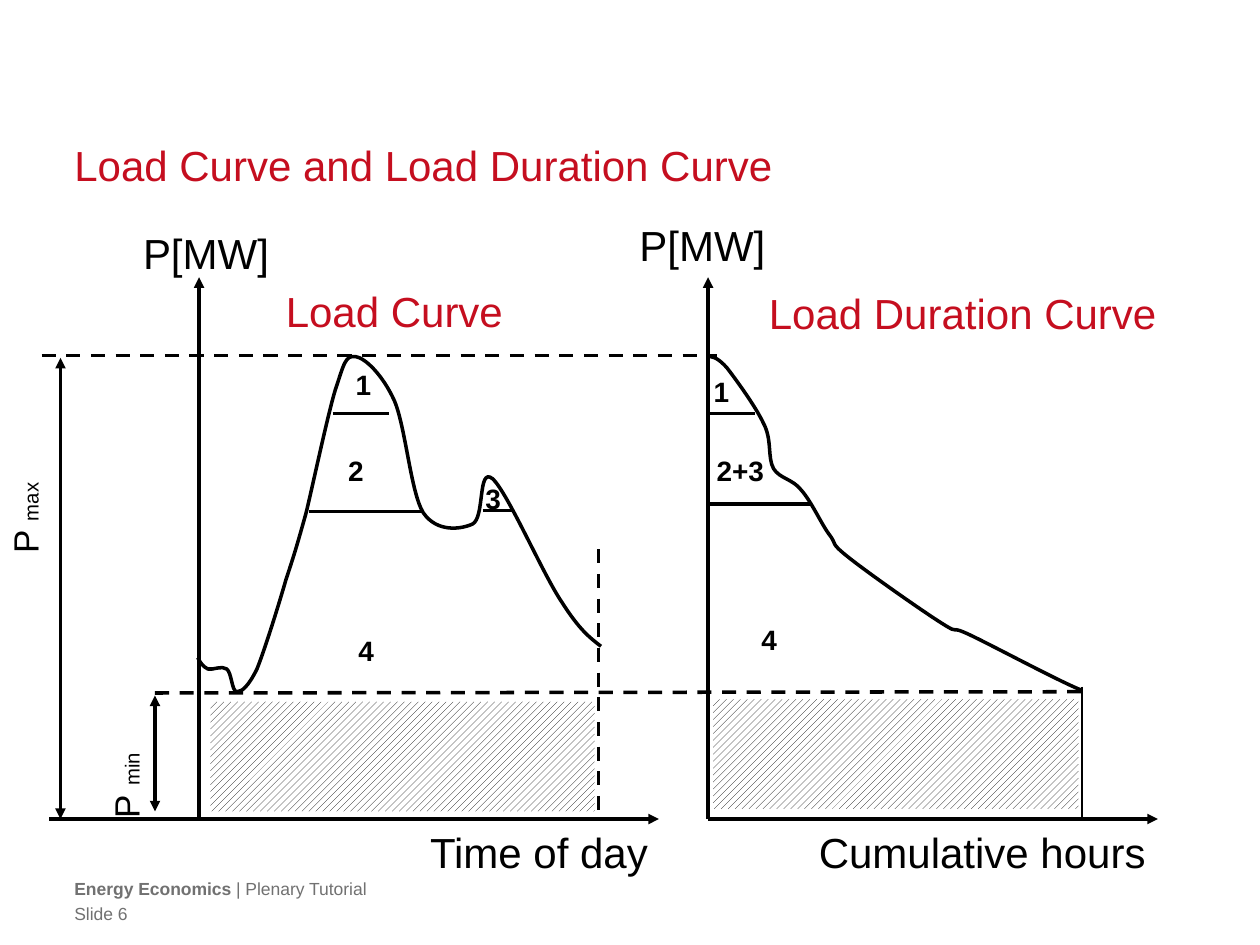
from lxml.etree import SubElement
from pptx import Presentation
from pptx.dml.color import RGBColor
from pptx.enum.dml import MSO_LINE, MSO_PATTERN
from pptx.enum.shapes import MSO_CONNECTOR, MSO_SHAPE
from pptx.enum.text import MSO_ANCHOR, PP_ALIGN
from pptx.oxml.ns import qn
from pptx.util import Inches, Pt

BLACK, WHITE, RED, GREY = "000000", "FFFFFF", "C50E1F", "717171"
FONT = "Arial"
TITLE = "Load Curve and Load Duration Curve"

BASE, AXIS_TOP = 6.5, 2.2
LOAD_AXIS, DURATION_AXIS = 1.58, 5.62
PEAK, MINIMUM = 2.82, 5.5

# x1, y1, x2, y2
AXES = [
    (0.39, BASE, 5.23, BASE),
    (LOAD_AXIS, BASE, LOAD_AXIS, AXIS_TOP),
    (DURATION_AXIS, BASE, 9.19, BASE),
    (DURATION_AXIS, BASE, DURATION_AXIS, AXIS_TOP),
]
DIMENSIONS = [(0.48, 2.84, 0.48, BASE), (1.23, 5.52, 1.23, 6.44)]
GUIDES = [
    (4.75, 4.36, 4.75, BASE),
    (1.23, MINIMUM, 8.59, 5.49),
    (0.33, PEAK, 5.69, PEAK),
]
BAND_LIMITS = [
    (2.45, 4.06, 3.35, 4.06),
    (2.64, 3.28, 3.09, 3.28),
    (3.83, 4.05, 4.06, 4.05),
    (DURATION_AXIS, 3.28, 5.99, 3.28),
    (DURATION_AXIS, 4, 6.44, 4),
]
DURATION_END = (8.59, 5.45, 8.59, 6.52)

# Start point, then three Bezier points for each segment
LOAD_CURVE = [
    (1.57, 5.22),
    (1.59, 5.26), (1.61, 5.29), (1.65, 5.31),
    (1.69, 5.32), (1.76, 5.28), (1.80, 5.31),
    (1.84, 5.34), (1.84, 5.49), (1.88, 5.49),
    (1.92, 5.49), (1.97, 5.45), (2.04, 5.31),
    (2.10, 5.16), (2.21, 4.81), (2.27, 4.60),
    (2.34, 4.39), (2.36, 4.32), (2.43, 4.07),
    (2.49, 3.82), (2.60, 3.30), (2.66, 3.10),
    (2.73, 2.89), (2.74, 2.82), (2.82, 2.83),
    (2.90, 2.84), (3.04, 2.98), (3.13, 3.18),
    (3.22, 3.39), (3.26, 3.91), (3.36, 4.07),
    (3.47, 4.23), (3.66, 4.20), (3.75, 4.16),
    (3.85, 4.11), (3.79, 3.70), (3.91, 3.80),
    (4.03, 3.91), (4.31, 4.56), (4.46, 4.78),
    (4.60, 5.00), (4.68, 5.06), (4.77, 5.13),
]
DURATION_CURVE = [
    (5.62, 2.83),
    (5.65, 2.83), (5.69, 2.83), (5.77, 2.92),
    (5.84, 3.01), (6.00, 3.23), (6.06, 3.36),
    (6.13, 3.49), (6.09, 3.63), (6.14, 3.72),
    (6.19, 3.80), (6.29, 3.80), (6.36, 3.89),
    (6.44, 3.98), (6.52, 4.16), (6.58, 4.24),
    (6.65, 4.33), (6.58, 4.30), (6.73, 4.42),
    (6.88, 4.54), (7.32, 4.85), (7.48, 4.95),
    (7.64, 5.05), (7.51, 4.95), (7.70, 5.04),
    (7.89, 5.13), (8.43, 5.42), (8.59, 5.48),
]

BASE_LOADS = [(1.67, 5.57, 3.05, 0.87), (5.66, 5.55, 2.9, 0.87)]
BAND_LABELS = [
    ("1", 2.55, 2.87), ("2", 2.49, 3.55), ("4", 2.57, 4.98), ("3", 3.58, 3.77),
    ("4", 5.77, 4.89), ("1", 5.39, 2.92), ("2+3", 5.54, 3.55),
]
# Text, box, colour, alignment
CAPTIONS = [
    ("P[MW]", (0.93, 1.76, 1.41, 0.5), BLACK, PP_ALIGN.CENTER),
    ("P[MW]", (4.87, 1.69, 1.41, 0.5), BLACK, PP_ALIGN.CENTER),
    ("Time of day", (2.79, 6.51, 2.45, 0.5), BLACK, PP_ALIGN.RIGHT),
    ("Cumulative hours", (6.21, 6.51, 2.98, 0.5), BLACK, PP_ALIGN.RIGHT),
    ("Load Curve", (2.11, 2.22, 2.04, 0.5), RED, PP_ALIGN.CENTER),
    ("Load Duration Curve", (5.94, 2.23, 3.4, 0.5), RED, PP_ALIGN.CENTER),
]
POWER_LABELS = [("max", (-0.02, 3.56, 0.54, 0.93)), ("min", (0.78, 5.43, 0.54, 1.16))]
FOOTER = [
    ("Energy Economics ", "| Plenary Tutorial", 6.97),
    ("", "Slide 6", 7.17),
]


def color(value):
    return RGBColor.from_string(value)


def inches(values):
    return [Inches(value) for value in values]


def format_font(font, size, value, bold=False):
    font.name, font.size, font.bold = FONT, Pt(size), bold
    font.color.rgb = color(value)


def clear_margins(frame):
    frame.margin_left = frame.margin_top = frame.margin_right = frame.margin_bottom = 0


def add_text(slide, text, box, size, value=BLACK, align=PP_ALIGN.CENTER, bold=False):
    shape = slide.shapes.add_textbox(*inches(box))
    shape.text_frame.word_wrap = True
    paragraph = shape.text_frame.paragraphs[0]
    paragraph.alignment = align
    format_font(paragraph.font, size, value, bold)
    if text:
        paragraph.add_run().text = text
    return shape


def add_line(slide, points, width=2, dashed=False, arrows=()):
    """Draw a line; arrows names the ends that carry a triangle."""
    connector = slide.shapes.add_connector(MSO_CONNECTOR.STRAIGHT, *inches(points))
    connector.line.color.rgb = color(BLACK)
    connector.line.width = Pt(width)
    if dashed:
        connector.line.dash_style = MSO_LINE.DASH
    properties = connector.element.spPr
    for end in arrows:
        SubElement(properties.find(qn("a:ln")), qn(f"a:{end}"), type="triangle")
    SubElement(properties, qn("a:effectLst"))


def add_curve(slide, points):
    """Build an outline through all points, then join each three as one Bezier segment."""
    start, *rest = [inches(point) for point in points]
    builder = slide.shapes.build_freeform(*start)
    builder.add_line_segments(rest, close=False)
    shape = builder.convert_to_shape()
    shape.shadow.inherit = False
    shape.fill.background()
    shape.line.color.rgb = color(BLACK)
    shape.line.width = Pt(2)
    path = next(shape.element.iter(qn("a:path")))
    segments = path.findall(qn("a:lnTo"))
    for first in range(0, len(segments), 3):
        bezier = SubElement(path, qn("a:cubicBezTo"))
        for segment in segments[first:first + 3]:
            bezier.append(segment[0])
            path.remove(segment)


def add_power_label(slide, subscript, box):
    """Write P with a subscript, reading upwards."""
    shape = add_text(slide, "P", box, 20)
    shape.rotation = 180
    shape.text_frame._txBody.bodyPr.set("vert", "eaVert")
    run = shape.text_frame.paragraphs[0].add_run()
    run.text = subscript
    run.font._element.set("baseline", "-25000")


def main():
    presentation = Presentation()
    presentation.slide_width, presentation.slide_height = Inches(10), Inches(7.5)
    slide = presentation.slides.add_slide(presentation.slide_layouts[5])

    title = slide.shapes.title
    title.left, title.top, title.width, title.height = inches((0.59, 1.09, 8.82, 0.81))
    title.text_frame.text = TITLE
    title.text_frame.vertical_anchor = MSO_ANCHOR.TOP
    clear_margins(title.text_frame)
    paragraph = title.text_frame.paragraphs[0]
    paragraph.alignment, paragraph.line_spacing = PP_ALIGN.LEFT, Pt(30)
    format_font(paragraph.font, 24, RED)

    for strong, plain, top in FOOTER:
        shape = add_text(slide, strong, (0.59, top, 8.82, 0.17), 10, GREY, PP_ALIGN.LEFT)
        clear_margins(shape.text_frame)
        paragraph = shape.text_frame.paragraphs[0]
        for run in paragraph.runs:
            run.font.bold = True
        paragraph.add_run().text = plain

    for box in BASE_LOADS:
        shape = slide.shapes.add_shape(MSO_SHAPE.RECTANGLE, *inches(box))
        shape.shadow.inherit = False
        shape.line.fill.background()
        shape.fill.patterned()
        shape.fill.pattern = MSO_PATTERN.WIDE_UPWARD_DIAGONAL
        shape.fill.fore_color.rgb = color(BLACK)
        shape.fill.back_color.rgb = color(WHITE)

    for points in AXES:
        add_line(slide, points, arrows=["tailEnd"])
    for points in DIMENSIONS:
        add_line(slide, points, arrows=["headEnd", "tailEnd"])
    for points in GUIDES:
        add_line(slide, points, dashed=True)
    for points in BAND_LIMITS:
        add_line(slide, points)
    add_line(slide, DURATION_END, width=1)
    for curve in (LOAD_CURVE, DURATION_CURVE):
        add_curve(slide, curve)

    for text, left, top in BAND_LABELS:
        add_text(slide, text, (left, top, 0.67, 0.37), 16, bold=True)
    for text, box, value, align in CAPTIONS:
        add_text(slide, text, box, 24, value, align)
    for subscript, box in POWER_LABELS:
        add_power_label(slide, subscript, box)

    presentation.save("out.pptx")


if __name__ == "__main__":
    main()
